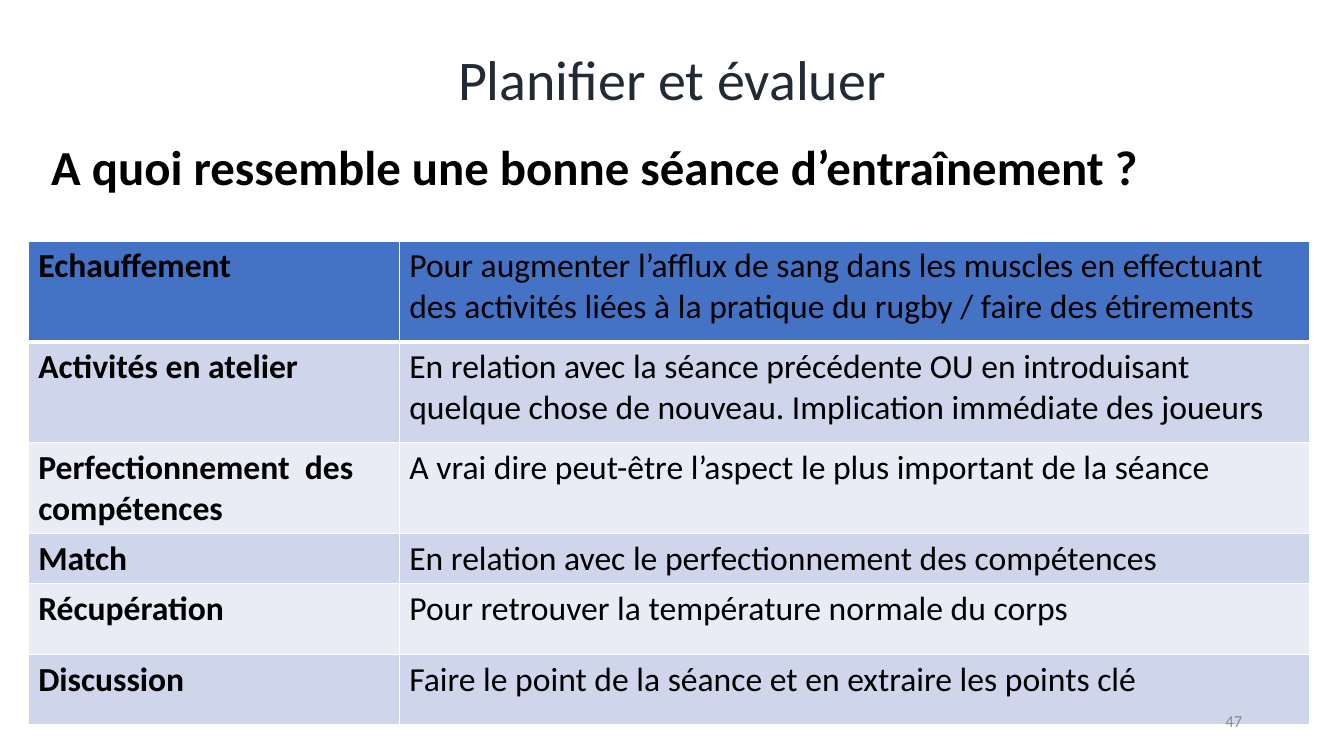
"""Slide on planning and evaluating a rugby training session."""
from lxml import etree
from pptx import Presentation
from pptx import util as u
from pptx.dml.color import RGBColor
from pptx.enum import text
from pptx.oxml.ns import qn

WIDTH, HEIGHT = u.Inches(13.33), u.Inches(7.5)
FONT = "Calibri"
BLACK = RGBColor(0, 0, 0)
WHITE = RGBColor(0xFF, 0xFF, 0xFF)
NAVY = RGBColor(0x22, 0x2A, 0x35)
GREY = RGBColor(0x8C, 0x8C, 0x8C)
HEADER_BLUE = RGBColor(0x44, 0x72, 0xC4)
BANDS = [RGBColor(0xE9, 0xEB, 0xF5), RGBColor(0xCF, 0xD5, 0xEA)]

TITLE = "Planifier et évaluer"
QUESTION = "A quoi ressemble une bonne séance d’entraînement ?"
PAGE = "47"
PHASES = [
    ("Echauffement", "Pour augmenter l’afflux de sang dans les muscles en effectuant "
     "des activités liées à la pratique du rugby / faire des étirements", 1),
    ("Activités en atelier", "En relation avec la séance précédente OU en introduisant "
     "quelque chose de nouveau. Implication immédiate des joueurs", 1),
    ("Perfectionnement  des compétences",
     "A vrai dire peut-être l’aspect le plus important de la séance", 0.7),
    ("Match", "En relation avec le perfectionnement des compétences", 0.41),
    ("Récupération", "Pour retrouver la température normale du corps", 0.7),
    ("Discussion", "Faire le point de la séance et en extraire les points clé", 0.7),
]
COLUMNS = [3.68, 9.03]


def style(paragraph, size, color, bold=False):
    for run in paragraph.runs:
        run.font.name, run.font.size, run.font.bold = FONT, u.Pt(size), bold
        run.font.color.rgb = color


def add_text(slide, words, box, size, color, align, anchor, bold=False):
    frame = slide.shapes.add_textbox(*map(u.Inches, box)).text_frame
    frame.word_wrap = True
    frame.vertical_anchor = anchor
    frame.text = words
    paragraph = frame.paragraphs[0]
    paragraph.alignment = align
    style(paragraph, size, color, bold)
    return paragraph


def add_borders(cell, bottom):
    properties = cell._tc.get_or_add_tcPr()
    for place, (side, points) in enumerate(zip("LRTB", (1, 1, 1, bottom))):
        line = etree.Element(qn(f"a:ln{side}"), w=str(u.Pt(points)))
        fill = etree.SubElement(line, qn("a:solidFill"))
        etree.SubElement(fill, qn("a:srgbClr"), val=str(WHITE))
        properties.insert(place, line)


def add_phases(slide):
    heights = [height for _, _, height in PHASES]
    box = (0.28, 2.39, sum(COLUMNS), sum(heights))
    table = slide.shapes.add_table(len(PHASES), len(COLUMNS), *map(u.Inches, box)).table
    for column, width in zip(table.columns, COLUMNS):
        column.width = u.Inches(width)
    for r, (phase, purpose, height) in enumerate(PHASES):
        table.rows[r].height = u.Inches(height)
        for c, words in enumerate((phase, purpose)):
            cell = table.cell(r, c)
            cell.text = words
            style(cell.text_frame.paragraphs[0], 24, BLACK, c == 0)
            cell.fill.solid()
            cell.fill.fore_color.rgb = BANDS[r % 2] if r else HEADER_BLUE
            add_borders(cell, 1 if r else 3)


def main():
    deck = Presentation()
    deck.slide_width, deck.slide_height = WIDTH, HEIGHT
    slide = deck.slides.add_slide(deck.slide_layouts[6])
    align, anchor = text.PP_ALIGN, text.MSO_ANCHOR
    title = add_text(slide, TITLE, (0, 0.42, 13.33, 0.8), 40, NAVY,
                     align.CENTER, anchor.MIDDLE)
    title.line_spacing = 0.9
    question = add_text(slide, QUESTION, (0.41, 1.42, 11.85, 0.8), 34.9, BLACK,
                        align.LEFT, anchor.TOP, True)
    question.line_spacing = 0.8
    question.space_before = u.Pt(10)
    add_phases(slide)
    add_text(slide, PAGE, (9.42, 6.95, 3, 0.4), 12, GREY, align.RIGHT, anchor.MIDDLE)
    deck.save("out.pptx")


if __name__ == "__main__":
    main()
